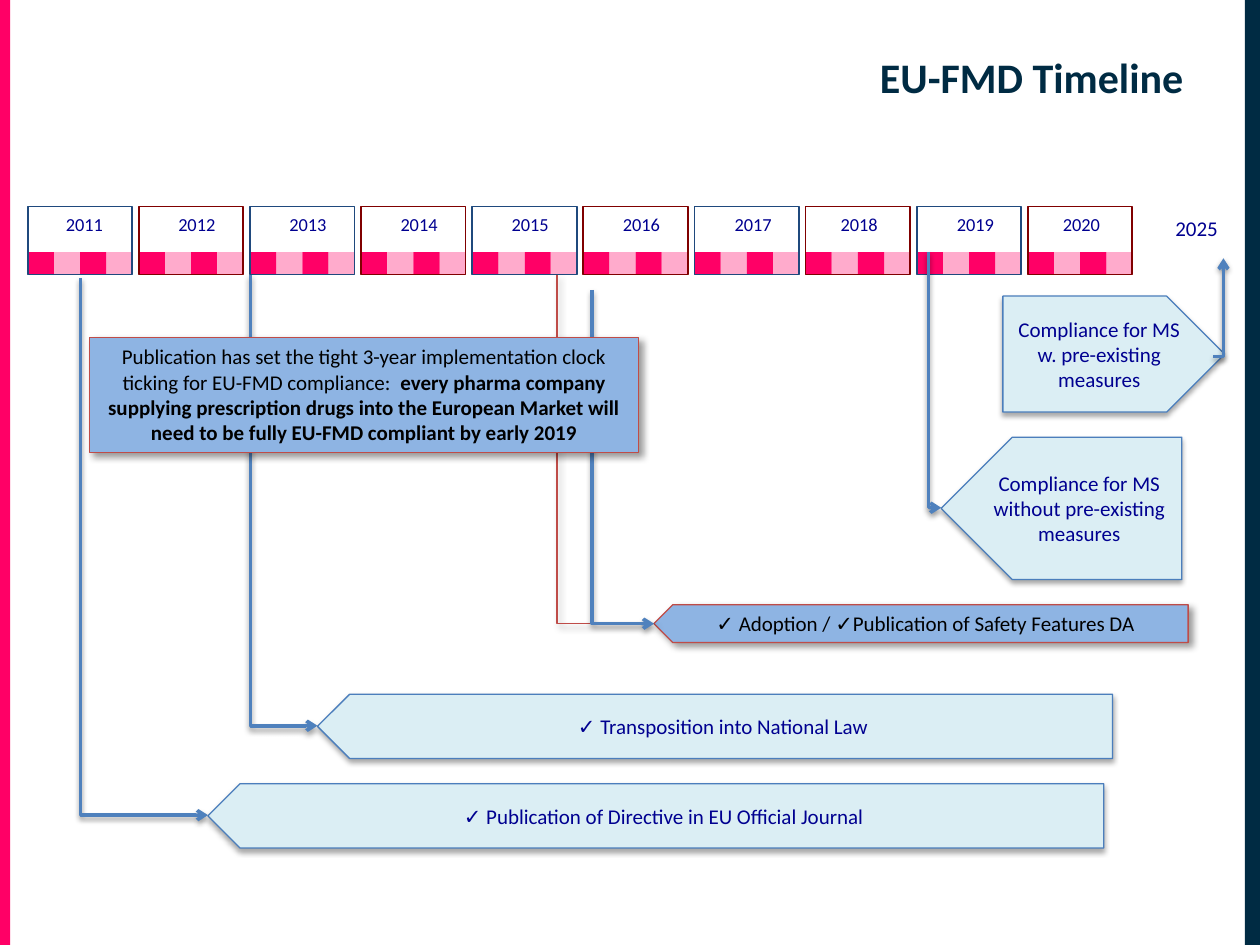
from typing import NamedTuple

from lxml.etree import SubElement
from pptx import Presentation
from pptx.dml.color import RGBColor
from pptx.enum.shapes import MSO_CONNECTOR, MSO_SHAPE
from pptx.enum.text import MSO_ANCHOR as Anchor, PP_ALIGN as Align
from pptx.oxml.ns import qn
from pptx.util import Inches, Pt

PINK = RGBColor(0xFF, 0x00, 0x66)
DARK_TEAL = RGBColor(0x00, 0x2B, 0x43)
NAVY = RGBColor(0x00, 0x00, 0x90)
BLACK = RGBColor(0x00, 0x00, 0x00)
FRAME_BLUE = RGBColor(0x1F, 0x49, 0x7D)
FRAME_RED = RGBColor(0x80, 0x00, 0x00)
PALE_BLUE = RGBColor(0xDB, 0xEE, 0xF4)
MID_BLUE = RGBColor(0x8E, 0xB4, 0xE3)
EDGE_BLUE = RGBColor(0x4B, 0x7E, 0xBC)
EDGE_RED = RGBColor(0xBF, 0x4C, 0x48)
ROUTE_BLUE = RGBColor(0x4F, 0x81, 0xBD)


class Box(NamedTuple):
    left: float
    top: float
    width: float
    height: float


class Shadow(NamedTuple):
    opacity: int
    blur: float
    distance: float
    angle: int


class Look(NamedTuple):
    fill: RGBColor
    edge: RGBColor
    ink: RGBColor
    shadow: Shadow


class Milestone(NamedTuple):
    text: str
    box: Box
    look: Look
    points_left: bool = True
    anchor: Anchor = Anchor.MIDDLE


class Route(NamedTuple):
    start: tuple[float, float]
    end: tuple[float, float]
    down_first: bool = True
    highlighted: bool = False


class Year(NamedTuple):
    label: str
    offset: float = 0.07
    width: float = 0.78
    wrap: bool = True


PLATE_SHADOW = Shadow(35, 3.1, 1.8, 90)
ROUTE_SHADOW = Shadow(38, 3.1, 1.6, 90)
RED_SHADOW = Shadow(40, 4, 3, 45)
STANDARD = Look(PALE_BLUE, EDGE_BLUE, NAVY, PLATE_SHADOW)
HIGHLIGHT = Look(MID_BLUE, EDGE_RED, BLACK, RED_SHADOW)

YEARS = [
    Year("2011", width=0.76), *(Year(str(y)) for y in range(2012, 2017)),
    Year("2017", 0.22, 0.53, False), Year("2018", 0.18, 0.5, False),
    Year("2019", 0.22, 0.5, False), Year("2020", 0.18, 0.5, False),
]
YEARS_LEFT, YEARS_TOP, YEAR_PITCH = 0.22, 1.64, 0.882
YEAR_WIDTH, YEAR_HEIGHT = 0.83, 0.54
QUARTER_HEIGHT = 0.18

MILESTONES = [
    Milestone("✓ Publication of Directive in EU Official Journal", Box(1.65, 6.22, 7.11, 0.51), STANDARD),
    Milestone("✓ Transposition into National Law", Box(2.52, 5.51, 6.31, 0.51), STANDARD),
    Milestone("✓ Adoption / ✓Publication of Safety Features DA", Box(5.19, 4.8, 4.24, 0.3),
              HIGHLIGHT, anchor=Anchor.TOP),
    Milestone("Compliance for MS without pre-existing measures", Box(7.47, 3.47, 1.91, 1.13), STANDARD),
    Milestone("Compliance for MS w. pre-existing measures", Box(7.96, 2.35, 1.76, 0.92),
              STANDARD, points_left=False),
]
ROUTES = [
    Route((0.64, 2.21), (1.65, 6.47)),
    Route((1.99, 2.18), (2.52, 5.76)),
    Route((4.42, 2.18), (5.19, 4.95), highlighted=True),
    Route((7.37, 2.0), (7.47, 4.03)),
    Route((4.7, 2.3), (5.19, 4.95)),
    Route((9.63, 2.83), (9.71, 2.05), down_first=False),
]
CLOCK_NOTE = "Publication has set the tight 3-year implementation clock ticking for EU-FMD compliance:  "
CLOCK_DEADLINE = ("every pharma company supplying prescription drugs into the European Market "
                  "will need to be fully EU-FMD compliant by early 2019")


def write(shape, text: str, *, size=12, color=NAVY, bold=False, bold_tail="",
          align=Align.CENTER, anchor=Anchor.TOP, wrap=True) -> None:
    """Fill the shape with one paragraph, optionally ending in a bold run."""
    frame = shape.text_frame
    frame.word_wrap = wrap
    frame.vertical_anchor = anchor
    paragraph = frame.paragraphs[0]
    paragraph.alignment = align
    for words, heavy in ((text, bold), (bold_tail, True)):
        if words:
            run = paragraph.add_run()
            run.text = words
            run.font.name, run.font.size, run.font.bold = "Calibri", Pt(size), heavy
            run.font.color.rgb = color


def add_label(slide, box: Box, text: str, **text_format) -> None:
    write(slide.shapes.add_textbox(*map(Inches, box)), text, **text_format)


def cast_shadow(shape, shadow: Shadow) -> None:
    effects = SubElement(shape._element.spPr, qn("a:effectLst"))
    outer = SubElement(effects, qn("a:outerShdw"), blurRad=str(Pt(shadow.blur)),
                       dist=str(Pt(shadow.distance)), dir=str(shadow.angle * 60000), rotWithShape="0")
    color = SubElement(outer, qn("a:srgbClr"), val="000000")
    SubElement(color, qn("a:alpha"), val=str(shadow.opacity * 1000))


def add_block(slide, box: Box, *, kind=MSO_SHAPE.RECTANGLE, fill=None, edge=None,
              edge_width=0.75, opacity=100, shadow=None):
    block = slide.shapes.add_shape(kind, *map(Inches, box))
    if fill is None:
        block.fill.background()
    else:
        block.fill.solid()
        block.fill.fore_color.rgb = fill
        if opacity < 100:
            color = block._element.spPr.find(qn("a:solidFill"))[0]
            SubElement(color, qn("a:alpha"), val=str(opacity * 1000))
    if edge is None:
        block.line.fill.background()
    else:
        block.line.color.rgb, block.line.width = edge, Pt(edge_width)
    if shadow:
        cast_shadow(block, shadow)
    else:
        block.shadow.inherit = False
    return block


def add_year(slide, index: int, year: Year) -> None:
    left = YEARS_LEFT + index * YEAR_PITCH
    quarter_width = YEAR_WIDTH / 4
    for quarter in range(4):
        box = Box(left + quarter * quarter_width, YEARS_TOP + YEAR_HEIGHT - QUARTER_HEIGHT,
                  quarter_width, QUARTER_HEIGHT)
        add_block(slide, box, fill=PINK, opacity=33 if quarter % 2 else 100)
    add_block(slide, Box(left, YEARS_TOP, YEAR_WIDTH, YEAR_HEIGHT),
              edge=FRAME_RED if index % 2 else FRAME_BLUE, edge_width=1)
    add_label(slide, Box(left + year.offset, YEARS_TOP, year.width, 0.28), year.label, size=10.5,
              align=Align.CENTER if year.wrap else Align.LEFT, wrap=year.wrap)


def add_milestone(slide, milestone: Milestone) -> None:
    look = milestone.look
    plate = add_block(slide, milestone.box, kind=MSO_SHAPE.PENTAGON, fill=look.fill,
                      edge=look.edge, shadow=look.shadow)
    if milestone.points_left:
        plate._element.spPr.find(qn("a:xfrm")).set("flipH", "1")
    write(plate, milestone.text, color=look.ink, anchor=milestone.anchor)


def add_route(slide, route: Route) -> None:
    """Draw a one-bend connector; going down first needs a quarter turn."""
    (x1, y1), (x2, y2) = route.start, route.end
    if route.down_first:
        mid_x, mid_y = (x1 + x2) / 2, (y1 + y2) / 2
        half_run, half_rise = (y2 - y1) / 2, (x2 - x1) / 2
        x1, x2 = mid_x + half_run, mid_x - half_run
        y1, y2 = mid_y - half_rise, mid_y + half_rise
    connector = slide.shapes.add_connector(MSO_CONNECTOR.ELBOW, *map(Inches, (x1, y1, x2, y2)))
    properties = connector._element.spPr
    properties.find(qn("a:prstGeom")).set("prst", "bentConnector2")
    if route.down_first:
        properties.find(qn("a:xfrm")).set("rot", str(270 * 60000))
    connector.line.color.rgb = EDGE_RED if route.highlighted else ROUTE_BLUE
    connector.line.width = Pt(0.75 if route.highlighted else 2)
    if not route.highlighted:
        SubElement(properties.find(qn("a:ln")), qn("a:tailEnd"), type="arrow")
    cast_shadow(connector, RED_SHADOW if route.highlighted else ROUTE_SHADOW)


def main() -> None:
    deck = Presentation()
    deck.slide_width, deck.slide_height = Inches(10), Inches(7.5)
    slide = deck.slides.add_slide(deck.slide_layouts[6])

    add_block(slide, Box(0, 0, 0.08, 7.5), fill=PINK)
    add_block(slide, Box(9.88, 0, 0.12, 7.5), fill=DARK_TEAL)
    add_label(slide, Box(3.9, 0.29, 5.59, 0.63), "EU-FMD Timeline", size=24, color=DARK_TEAL,
              bold=True, align=Align.RIGHT, anchor=Anchor.MIDDLE)
    for index, year in enumerate(YEARS):
        add_year(slide, index, year)
    add_label(slide, Box(9.23, 1.66, 0.54, 0.3), "2025", align=Align.LEFT, wrap=False)
    for milestone in MILESTONES:
        add_milestone(slide, milestone)
    for route in ROUTES:
        add_route(slide, route)
    clock = add_block(slide, Box(0.71, 2.68, 4.36, 0.91), fill=HIGHLIGHT.fill,
                      edge=HIGHLIGHT.edge, shadow=HIGHLIGHT.shadow)
    write(clock, CLOCK_NOTE, color=HIGHLIGHT.ink, bold_tail=CLOCK_DEADLINE)

    deck.save("out.pptx")


if __name__ == "__main__":
    main()
